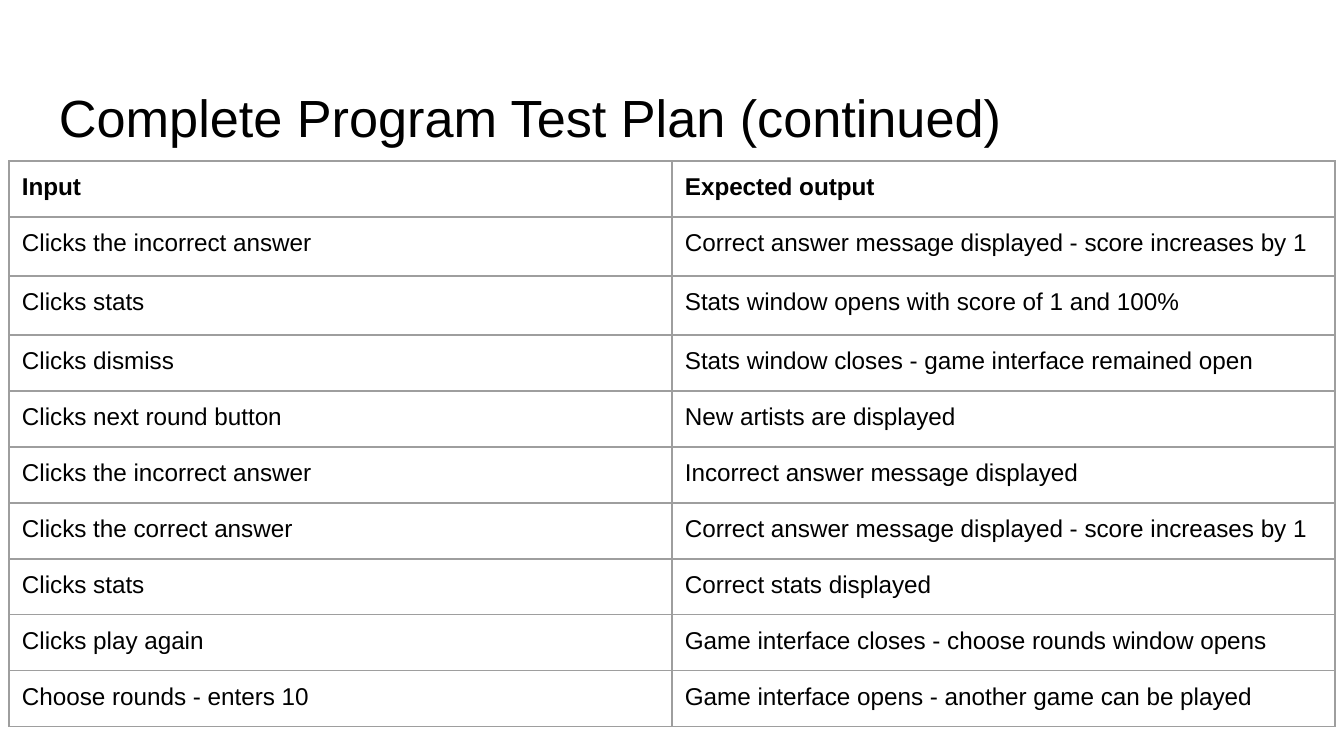
import pptx
import pptx.util
import pptx.dml.color
import pptx.enum.text
import pptx.oxml.ns
from lxml import etree

TITLE = "Complete Program Test Plan (continued)"
HEAD = ("Input", "Expected output")
STEPS = [
    ("Clicks the incorrect answer", "Correct answer message displayed - score increases by 1"),
    ("Clicks stats", "Stats window opens with score of 1 and 100%"),
    ("Clicks dismiss", "Stats window closes - game interface remained open"),
    ("Clicks next round button", "New artists are displayed"),
    ("Clicks the incorrect answer", "Incorrect answer message displayed"),
    ("Clicks the correct answer", "Correct answer message displayed - score increases by 1"),
    ("Clicks stats", "Correct stats displayed"),
    ("Clicks play again", "Game interface closes - choose rounds window opens"),
    ("Choose rounds - enters 10", "Game interface opens - another game can be played"),
]
THEME = {"font": "Arial", "ink": "000000", "rule": "9E9E9E",
         "title": 28, "body": 13, "line": 0.75}

WIDE, HIGH = 1344, 756
LEFT, TOP, COL = 9, 161, 663
ROW, TALL = 56, 59
TALL_ROWS = (1, 2)
PAD = 13


def px(n):
    return round(n * 914400 / 134.4)


def write(frame, text, size, bold=False):
    para = frame.paragraphs[0]
    para.alignment = pptx.enum.text.PP_ALIGN.LEFT
    run = para.add_run()
    run.text = text
    font = run.font
    font.name, font.size, font.bold = THEME["font"], pptx.util.Pt(size), bold
    font.color.rgb = pptx.dml.color.RGBColor.from_string(THEME["ink"])


def pad(box, top=PAD):
    box.margin_left = box.margin_right = box.margin_bottom = px(PAD)
    box.margin_top = px(top)
    box.vertical_anchor = pptx.enum.text.MSO_ANCHOR.TOP


def rule(cell):
    """Draw a thin line on all four sides of the cell."""
    qn = pptx.oxml.ns.qn
    props = cell._tc.get_or_add_tcPr()
    for side in "LRTB":
        line = etree.SubElement(props, qn("a:ln" + side),
                                w=str(pptx.util.Pt(THEME["line"])))
        fill = etree.SubElement(line, qn("a:solidFill"))
        etree.SubElement(fill, qn("a:srgbClr"), val=THEME["rule"])


def main():
    deck = pptx.Presentation()
    deck.slide_width, deck.slide_height = px(WIDE), px(HIGH)
    slide = deck.slides.add_slide(deck.slide_layouts[5])

    title = slide.shapes.title
    title.left, title.top, title.width, title.height = map(px, (46, 66, 1253, 84))
    frame = title.text_frame
    frame.word_wrap = True
    frame.auto_size = pptx.enum.text.MSO_AUTO_SIZE.NONE
    pad(frame, top=19)
    write(frame, TITLE, THEME["title"])

    rows = [HEAD] + STEPS
    highs = [TALL if i in TALL_ROWS else ROW for i in range(len(rows))]
    grid = slide.shapes.add_table(len(rows), len(HEAD), px(LEFT), px(TOP),
                                  px(COL * len(HEAD)), px(sum(highs))).table
    grid.first_row = grid.horz_banding = False
    for col in grid.columns:
        col.width = px(COL)
    for i, texts in enumerate(rows):
        grid.rows[i].height = px(highs[i])
        for j, text in enumerate(texts):
            cell = grid.cell(i, j)
            pad(cell)
            rule(cell)
            cell.fill.background()
            write(cell.text_frame, text, THEME["body"], bold=i == 0)

    deck.save("out.pptx")


if __name__ == "__main__":
    main()
